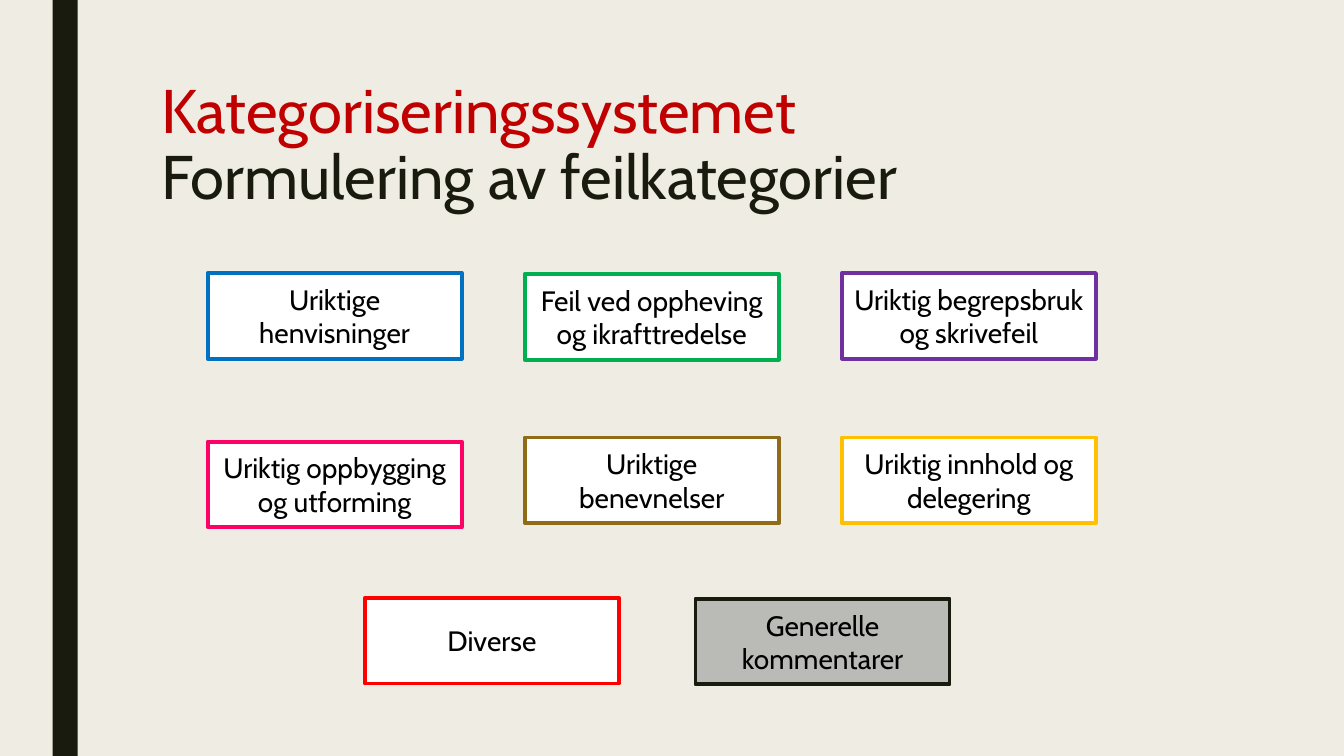
from pptx import Presentation
from pptx.dml.color import RGBColor
from pptx.enum.shapes import MSO_SHAPE
from pptx.enum.text import MSO_ANCHOR, MSO_AUTO_SIZE, PP_ALIGN
from pptx.util import Pt

FONT = "Cabin"
CREAM = RGBColor(0xEF, 0xED, 0xE3)
DARK = RGBColor(0x19, 0x1B, 0x0E)
DARK_RED = RGBColor(0xC0, 0x00, 0x00)
BLACK = RGBColor(0x00, 0x00, 0x00)
WHITE = RGBColor(0xFF, 0xFF, 0xFF)
GRAY = RGBColor(0xBA, 0xBB, 0xB6)
BLUE = RGBColor(0x00, 0x70, 0xC0)
GREEN = RGBColor(0x00, 0xB0, 0x50)
PURPLE = RGBColor(0x70, 0x30, 0xA0)
PINK = RGBColor(0xFF, 0x00, 0x66)
BROWN = RGBColor(0x90, 0x6B, 0x18)
YELLOW = RGBColor(0xFF, 0xC0, 0x00)
RED = RGBColor(0xFF, 0x00, 0x00)

SLIDE_W, SLIDE_H = 960, 540
BOX_W, BOX_H = 181.5, 61.2

# Each row: left, top, pitch, then (text, line, fill, drop below the row top)
ROWS = [
    (148.3, 195, 226.5, [
        ("Uriktige henvisninger", BLUE, WHITE, 0),
        ("Feil ved oppheving og ikrafttredelse", GREEN, WHITE, 0.7),
        ("Uriktig begrepsbruk og skrivefeil", PURPLE, WHITE, 0)]),
    (148.3, 312.5, 226.5, [
        ("Uriktig oppbygging og utforming", PINK, WHITE, 2.9),
        ("Uriktige benevnelser", BROWN, WHITE, 0),
        ("Uriktig innhold og delegering", YELLOW, WHITE, 0)]),
    (260.6, 427, 236.2, [
        ("Diverse", RED, WHITE, 0),
        ("Generelle kommentarer", DARK, GRAY, 0.7)]),
]


def add_text(p, text, size=20, color=BLACK, align=PP_ALIGN.CENTER):
    p.alignment = align
    r = p.add_run()
    r.text = text
    r.font.name = FONT
    r.font.size = Pt(size)
    r.font.color.rgb = color


def add_box(s, left, top, width, height, fill, line=None):
    sp = s.shapes.add_shape(MSO_SHAPE.RECTANGLE, Pt(left), Pt(top), Pt(width), Pt(height))
    sp.shadow.inherit = False
    sp.fill.solid()
    sp.fill.fore_color.rgb = fill
    if line is None:
        sp.line.fill.background()
    else:
        sp.line.color.rgb = line
        sp.line.width = Pt(2.75)
    return sp


def add_title(s, left, top, width, height):
    title = s.shapes.title
    title.left, title.top = Pt(left), Pt(top)
    title.width, title.height = Pt(width), Pt(height)
    tf = title.text_frame
    tf.word_wrap = True
    tf.auto_size = MSO_AUTO_SIZE.NONE
    tf.vertical_anchor = MSO_ANCHOR.TOP
    p = tf.paragraphs[0]
    p.line_spacing = 0.89
    add_text(p, "Kategoriseringssystemet", size=44, color=DARK_RED, align=PP_ALIGN.LEFT)
    p.add_line_break()
    add_text(p, "Formulering av feilkategorier", size=44, color=DARK, align=PP_ALIGN.LEFT)


def add_category_row(s, left, top, pitch, categories):
    for i, (text, line, fill, drop) in enumerate(categories):
        sp = add_box(s, left + i * pitch, top + drop, BOX_W, BOX_H, fill, line)
        tf = sp.text_frame
        tf.word_wrap = True
        tf.vertical_anchor = MSO_ANCHOR.MIDDLE
        add_text(tf.paragraphs[0], text)


def main():
    prs = Presentation()
    prs.slide_width, prs.slide_height = Pt(SLIDE_W), Pt(SLIDE_H)
    s = prs.slides.add_slide(prs.slide_layouts[5])
    s.background.fill.solid()
    s.background.fill.fore_color.rgb = CREAM
    add_box(s, 37.5, 0, 18, SLIDE_H, DARK)
    add_title(s, 108, 54, 756, 117)
    for row in ROWS:
        add_category_row(s, *row)
    prs.save("out.pptx")


if __name__ == "__main__":
    main()
